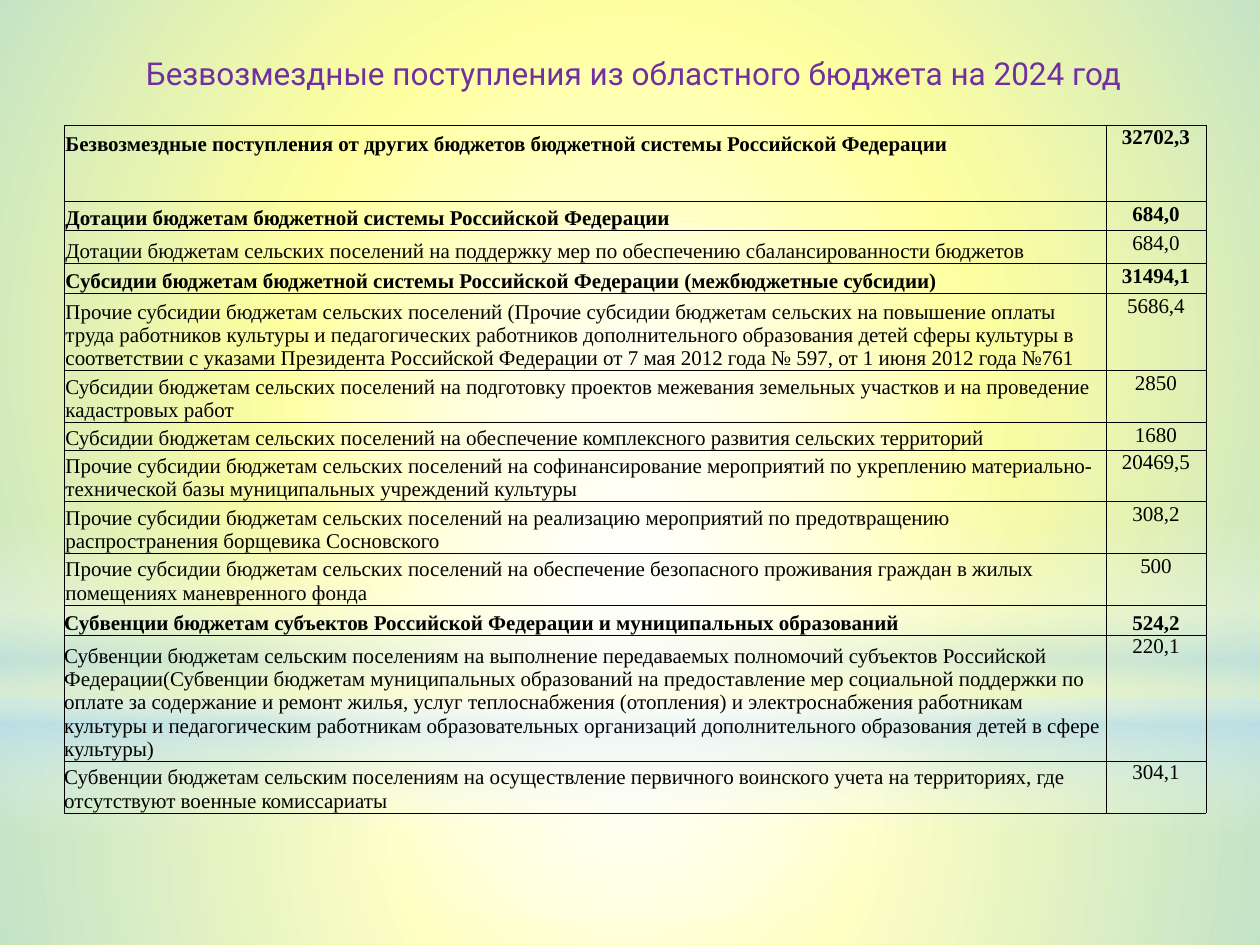
from typing import NamedTuple, Optional

import pptx
import pptx.dml.color
import pptx.enum.shapes
import pptx.enum.text
import pptx.oxml
import pptx.oxml.ns
import pptx.util

Inches = pptx.util.Inches
Pt = pptx.util.Pt
Anchor = pptx.enum.text.MSO_ANCHOR
Align = pptx.enum.text.PP_ALIGN
Preset = pptx.enum.shapes.MSO_SHAPE

COLORS = {"yellow": "FFFF00", "white": "FFFFFF", "sky": "B4DCFA",
          "purple": "7030A0", "black": "000000"}
TITLE = "Безвозмездные поступления из областного бюджета на 2024 год"
NAMESPACE = pptx.oxml.ns.nsdecls("a")
RADIAL = ('<a:path path="circle"><a:fillToRect l="50000" t="50000" '
          'r="50000" b="50000"/></a:path>')
VERTICAL = '<a:lin ang="5400000" scaled="0"/>'


class Glow(NamedTuple):
    """A background shape; stops are (position %, colour, opacity %)."""
    preset: Preset
    top: float
    height: float
    stops: list
    direction: str = RADIAL


class Row(NamedTuple):
    label: str
    value: str
    height: float
    bold: bool = False
    inset: float = 0.01
    label_anchor: Anchor = Anchor.BOTTOM
    value_anchor: Anchor = Anchor.TOP
    label_top: Optional[float] = None


GLOWS = [
    Glow(Preset.RECTANGLE, 5.58, 1.92,
         [(0, "white", 91), (37, "white", 76), (100, "sky", 79)]),
    Glow(Preset.RECTANGLE, 0, 5.58,
         [(0, "white", 89), (48, "white", 62), (100, "sky", 79)]),
    Glow(Preset.RECTANGLE, 4.12, 2.5,
         [(0, "white", 0), (29, "white", 30), (45, "sky", 40),
          (55, "white", 26), (65, "sky", 60), (100, "white", 0)], VERTICAL),
    Glow(Preset.OVAL, 1.75, 5.58, [(0, "white", 100), (56, "white", 0)]),
]

ROWS = [
    Row("Безвозмездные поступления от других бюджетов бюджетной системы Российской Федерации",
        "32702,3", 0.61, bold=True, label_anchor=Anchor.TOP, label_top=0.06),
    Row("Дотации бюджетам бюджетной системы Российской Федерации", "684,0", 0.23, bold=True),
    Row("Дотации бюджетам сельских поселений на поддержку мер по обеспечению "
        "сбалансированности бюджетов", "684,0", 0.26),
    Row("Субсидии бюджетам бюджетной системы Российской Федерации (межбюджетные субсидии)",
        "31494,1", 0.24, bold=True),
    Row("Прочие субсидии бюджетам сельских поселений (Прочие субсидии бюджетам сельских "
        "на повышение оплаты труда работников культуры и педагогических работников "
        "дополнительного образования детей сферы культуры в соответствии с указами "
        "Президента Российской Федерации от 7 мая 2012 года № 597, от 1 июня 2012 года №761",
        "5686,4", 0.6),
    Row("Субсидии бюджетам сельских поселений на подготовку проектов межевания земельных "
        "участков и на проведение кадастровых работ", "2850", 0.41),
    Row("Субсидии бюджетам сельских поселений на обеспечение комплексного развития "
        "сельских территорий", "1680", 0.22),
    Row("Прочие субсидии бюджетам сельских поселений на софинансирование мероприятий по "
        "укреплению материально-технической базы муниципальных учреждений культуры",
        "20469,5", 0.41),
    Row("Прочие субсидии бюджетам сельских поселений на реализацию мероприятий по "
        "предотвращению распространения борщевика Сосновского", "308,2", 0.41),
    Row("Прочие субсидии бюджетам сельских поселений на обеспечение безопасного проживания "
        "граждан в жилых помещениях маневренного фонда", "500", 0.41),
    Row("Субвенции бюджетам субъектов Российской Федерации и муниципальных образований",
        "524,2", 0.24, bold=True, inset=0, value_anchor=Anchor.BOTTOM),
    Row("Субвенции бюджетам сельским поселениям на выполнение передаваемых полномочий "
        "субъектов Российской Федерации(Субвенции бюджетам муниципальных образований на "
        "предоставление мер социальной поддержки по оплате за содержание и ремонт жилья, "
        "услуг теплоснабжения (отопления) и электроснабжения работникам культуры и "
        "педагогическим работникам образовательных организаций дополнительного "
        "образования детей в сфере культуры)", "220,1", 1.0, inset=0),
    Row("Субвенции бюджетам сельским поселениям на осуществление первичного воинского учета "
        "на территориях, где отсутствуют военные комиссариаты", "304,1", 0.41, inset=0),
]


def rgb(name: str) -> pptx.dml.color.RGBColor:
    return pptx.dml.color.RGBColor.from_string(COLORS[name])


def write(frame, text: str, *, font: str, size: float, color: str,
          bold: bool = False, align: Align = Align.LEFT) -> None:
    para = frame.paragraphs[0]
    para.alignment = align
    span = para.add_run()
    span.text = text
    span.font.name = font
    span.font.size = Pt(size)
    span.font.bold = bold
    span.font.color.rgb = rgb(color)


def draw_glow(page, glow: Glow) -> None:
    shape = page.shapes.add_shape(glow.preset, 0, Inches(glow.top),
                                  Inches(10), Inches(glow.height))
    shape.shadow.inherit = False
    shape.line.fill.background()
    shape.fill.background()
    stops = "".join(
        f'<a:gs pos="{position * 1000}"><a:srgbClr val="{COLORS[color]}">'
        f'<a:alpha val="{opacity * 1000}"/></a:srgbClr></a:gs>'
        for position, color, opacity in glow.stops)
    gradient = pptx.oxml.parse_xml(
        f'<a:gradFill {NAMESPACE} rotWithShape="1"><a:gsLst>{stops}</a:gsLst>'
        f'{glow.direction}</a:gradFill>')
    properties = shape.element.spPr
    properties.replace(properties.find(pptx.oxml.ns.qn("a:noFill")), gradient)


def format_cell(cell, anchor: Anchor, inset: float, top: float) -> None:
    cell.vertical_anchor = anchor
    cell.margin_left = cell.margin_right = Inches(inset)
    cell.margin_top, cell.margin_bottom = Inches(top), 0
    cell.fill.background()
    properties = cell._tc.get_or_add_tcPr()
    # Borders come before the fill in the cell properties
    for index, side in enumerate(("lnL", "lnR", "lnT", "lnB")):
        properties.insert(index, pptx.oxml.parse_xml(
            f'<a:{side} {NAMESPACE} w="{int(Pt(0.23))}"><a:solidFill>'
            f'<a:srgbClr val="{COLORS["black"]}"/></a:solidFill></a:{side}>'))


def draw_table(page, rows: list[Row]) -> None:
    widths = (8.27, 0.79)
    height = sum(row.height for row in rows)
    table = page.shapes.add_table(len(rows), 2, Inches(0.51), Inches(0.99),
                                  Inches(sum(widths)), Inches(height)).table
    table.first_row = table.horz_banding = False
    for column, width in zip(table.columns, widths):
        column.width = Inches(width)
    for index, row in enumerate(rows):
        table.rows[index].height = Inches(row.height)
        label_top = row.inset if row.label_top is None else row.label_top
        cells = ((row.label, Align.LEFT, row.label_anchor, label_top),
                 (row.value, Align.CENTER, row.value_anchor, row.inset))
        for column, (text, align, anchor, top) in enumerate(cells):
            cell = table.cell(index, column)
            format_cell(cell, anchor, row.inset, top)
            write(cell.text_frame, text, font="Times New Roman", size=12,
                  color="black", bold=row.bold, align=align)


def main() -> None:
    deck = pptx.Presentation()
    deck.slide_width, deck.slide_height = Inches(10), Inches(7.5)
    page = deck.slides.add_slide(deck.slide_layouts[6])

    # Background
    page.background.fill.solid()
    page.background.fill.fore_color.rgb = rgb("yellow")
    for glow in GLOWS:
        draw_glow(page, glow)

    # Title
    box = page.shapes.add_textbox(Inches(1.06), Inches(0.38), Inches(7.95), Inches(0.4))
    box.text_frame.word_wrap = False
    box.text_frame.vertical_anchor = Anchor.MIDDLE
    write(box.text_frame, TITLE, font="Roboto", size=18, color="purple")

    # Budget table
    draw_table(page, ROWS)
    deck.save("out.pptx")


if __name__ == "__main__":
    main()
